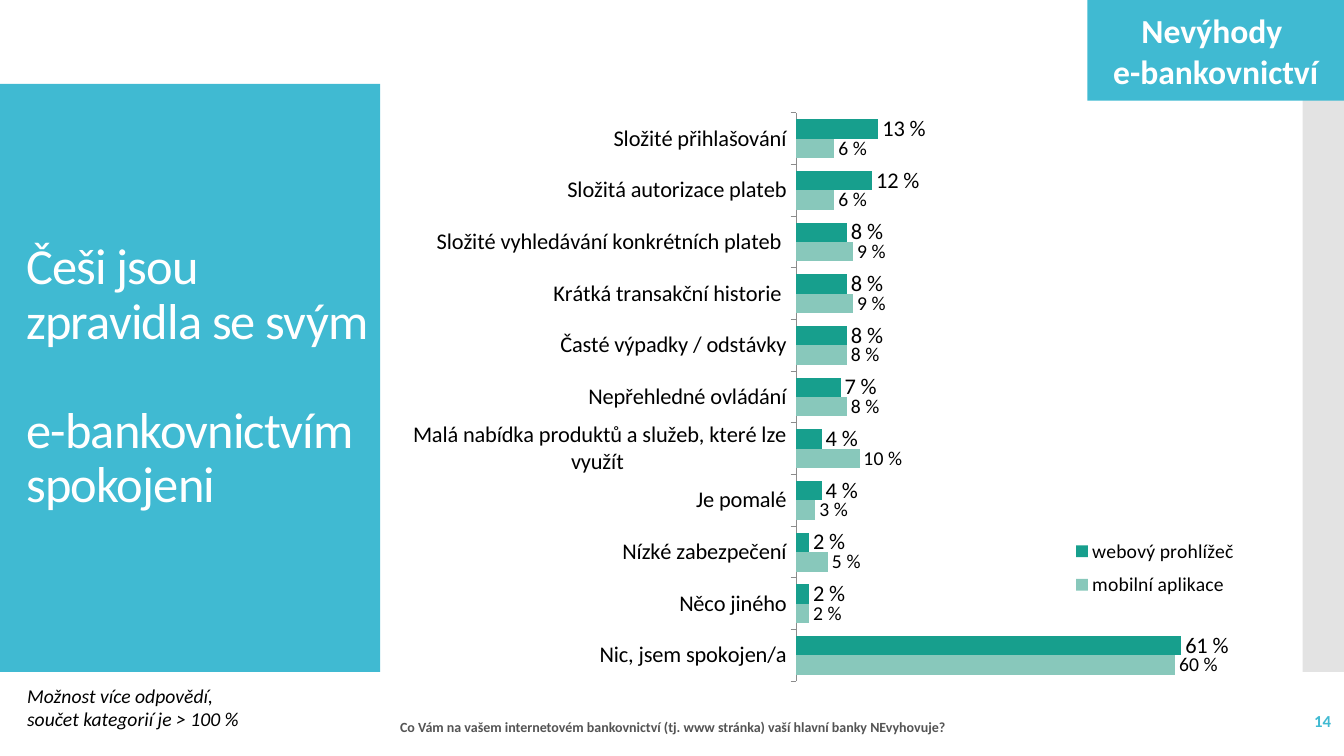
import lxml.etree
import pptx
import pptx.chart.data
import pptx.dml.color
import pptx.enum.chart
import pptx.enum.shapes
import pptx.enum.text
import pptx.oxml.ns
import pptx.util

COLORS = {
    "blue": "40BAD2", "gray": "C8C8C8", "white": "FFFFFF", "black": "000000",
    "question": "545454", "axis": "8C8C8C", "web": "179F8D", "mobile": "88C8BB",
}
ALIGN = pptx.enum.text.PP_ALIGN
qn = pptx.oxml.ns.qn

deck = pptx.Presentation()
deck.slide_width = pptx.util.Inches(13.33)
deck.slide_height = pptx.util.Inches(7.5)
page = deck.slides.add_slide(deck.slide_layouts[5])


def area(left, top, width, height):
    return [int(deck.slide_width * left / 100), int(deck.slide_height * top / 100),
            int(deck.slide_width * width / 100), int(deck.slide_height * height / 100)]


def style(font, size, color, bold=False, italic=False):
    font.name = "Calibri"
    font.size = pptx.util.Pt(size)
    font.bold = bold
    font.italic = italic
    font.color.rgb = pptx.dml.color.RGBColor.from_string(COLORS[color])


panels = []
for place, color in [
    (area(0, 11.11, 28.28, 77.78), "blue"),
    (area(96.92, 11.11, 3.08, 77.78), "gray"),
    (area(80.91, 0, 19.09, 13.33), "blue"),
]:
    panel = page.shapes.add_shape(pptx.enum.shapes.MSO_SHAPE.RECTANGLE, *place)
    panel.shadow.inherit = False
    panel.fill.solid()
    panel.fill.fore_color.rgb = pptx.dml.color.RGBColor.from_string(COLORS[color])
    panel.line.fill.background()
    panels.append(panel)
side_panel, edge_strip, topic_tag = panels

edge_color = edge_strip.element.find(".//" + qn("a:srgbClr"))
lxml.etree.SubElement(edge_color, qn("a:alpha")).set("val", "50000")

title = page.shapes.title
edge_strip.element.addnext(title.element)
title.left, title.top, title.width, title.height = area(1.2, 16.4, 27.53, 67.07)
title.text_frame.text = "Češi jsou zpravidla se svým \ve-bankovnictvím spokojeni"
title.text_frame.word_wrap = True
title.text_frame.auto_size = pptx.enum.text.MSO_AUTO_SIZE.NONE
title.text_frame.vertical_anchor = pptx.enum.text.MSO_ANCHOR.MIDDLE
para = title.text_frame.paragraphs[0]
para.alignment = ALIGN.LEFT
para.line_spacing = 0.9
style(para.font, 36, "white")
for span in para.runs:
    span.font.size = pptx.util.Pt(36)
    span.font.element.set("spc", "-60") if hasattr(span.font, "element") else span._r.get_or_add_rPr().set("spc", "-60")

topic_tag.text_frame.text = "Nevýhody \ne-bankovnictví"
for para in topic_tag.text_frame.paragraphs:
    para.alignment = ALIGN.CENTER
    style(para.font, 24, "white", bold=True)

for text, place, size, color, bold, italic, alignment in [
    ("14", area(87.25, 92.67, 12.53, 5.33), 12, "blue", True, False, ALIGN.RIGHT),
    ("Co Vám na vašem internetovém bankovnictví (tj. www stránka) vaší hlavní banky NEvyhovuje?",
     area(29.03, 94.4, 58.21, 3.6), 10, "question", True, False, ALIGN.LEFT),
    ("Možnost více odpovědí, součet kategorií je > 100 %",
     area(1.28, 89.73, 18.83, 7.6), 14, "black", False, True, ALIGN.LEFT),
]:
    box = page.shapes.add_textbox(*place)
    box.text_frame.word_wrap = True
    box.text_frame.vertical_anchor = pptx.enum.text.MSO_ANCHOR.MIDDLE
    box.text_frame.text = text
    para = box.text_frame.paragraphs[0]
    para.alignment = alignment
    style(para.font, size, color, bold, italic)

answers = [
    ("Nic, jsem spokojen/a", 0.6, 0.61),
    ("Něco jiného", 0.02, 0.02),
    ("Nízké zabezpečení", 0.05, 0.02),
    ("Je pomalé", 0.03, 0.04),
    ("Malá nabídka produktů a služeb, které lze využít ", 0.1, 0.04),
    ("Nepřehledné ovládání", 0.08, 0.07),
    ("Časté výpadky / odstávky", 0.08, 0.08),
    ("Krátká transakční historie ", 0.09, 0.08),
    ("Složité vyhledávání konkrétních plateb ", 0.09, 0.08),
    ("Složitá autorizace plateb", 0.06, 0.12),
    ("Složité přihlašování", 0.06, 0.13),
]
names, mobile, web = zip(*answers)
data = pptx.chart.data.CategoryChartData(number_format="0 %")
data.categories = names
data.add_series("mobilní aplikace", mobile)
data.add_series("webový prohlížeč", web)
chart = page.shapes.add_chart(
    pptx.enum.chart.XL_CHART_TYPE.BAR_CLUSTERED, *area(30.61, 10.67, 65.87, 83.73), data).chart
chart.has_title = False
style(chart.font, 10, "black")

plot = chart.plots[0]
plot.gap_width = 66
plot.overlap = 0
plot.vary_by_categories = False
for series, color, size in zip(plot.series, ["mobile", "web"], [14, 16]):
    series.format.fill.solid()
    series.format.fill.fore_color.rgb = pptx.dml.color.RGBColor.from_string(COLORS[color])
    labels = series.data_labels
    labels.show_value = True
    labels.number_format = "0 %"
    labels.number_format_is_linked = False
    labels.position = pptx.enum.chart.XL_LABEL_POSITION.OUTSIDE_END
    style(labels.font, size, "black")

axis = chart.category_axis
axis.major_tick_mark = pptx.enum.chart.XL_TICK_MARK.OUTSIDE
axis.format.line.color.rgb = pptx.dml.color.RGBColor.from_string(COLORS["axis"])
axis.format.line.width = pptx.util.Pt(0.75)
style(axis.tick_labels.font, 16, "black")
chart.value_axis.minimum_scale = 0
chart.value_axis.maximum_scale = 0.7
chart.value_axis.has_major_gridlines = False
chart.value_axis.visible = False

chart.has_legend = True
chart.legend.position = pptx.enum.chart.XL_LEGEND_POSITION.RIGHT
chart.legend.include_in_layout = False
style(chart.legend.font, 14, "black")

chart_space = plot.chart.element if hasattr(plot.chart, "element") else chart._chartSpace
for parent_tag, index, target, shares in [
    ("c:plotArea", 0, "inner", (0.435, 0.051, 0.499, 0.898)),
    ("c:legend", 1, None, (0.74, 0.71, 0.2, 0.12)),
]:
    parent = chart_space.find(".//" + qn(parent_tag))
    for old_layout in parent.findall(qn("c:layout")):
        parent.remove(old_layout)
    layout = lxml.etree.Element(qn("c:layout"))
    parent.insert(index, layout)
    manual = lxml.etree.SubElement(layout, qn("c:manualLayout"))
    settings = [("layoutTarget", target)] if target else []
    settings += [("xMode", "edge"), ("yMode", "edge")]
    settings += zip("xywh", map(str, shares))
    for name, value in settings:
        lxml.etree.SubElement(manual, qn("c:" + name)).set("val", value)

deck.save("out.pptx")
